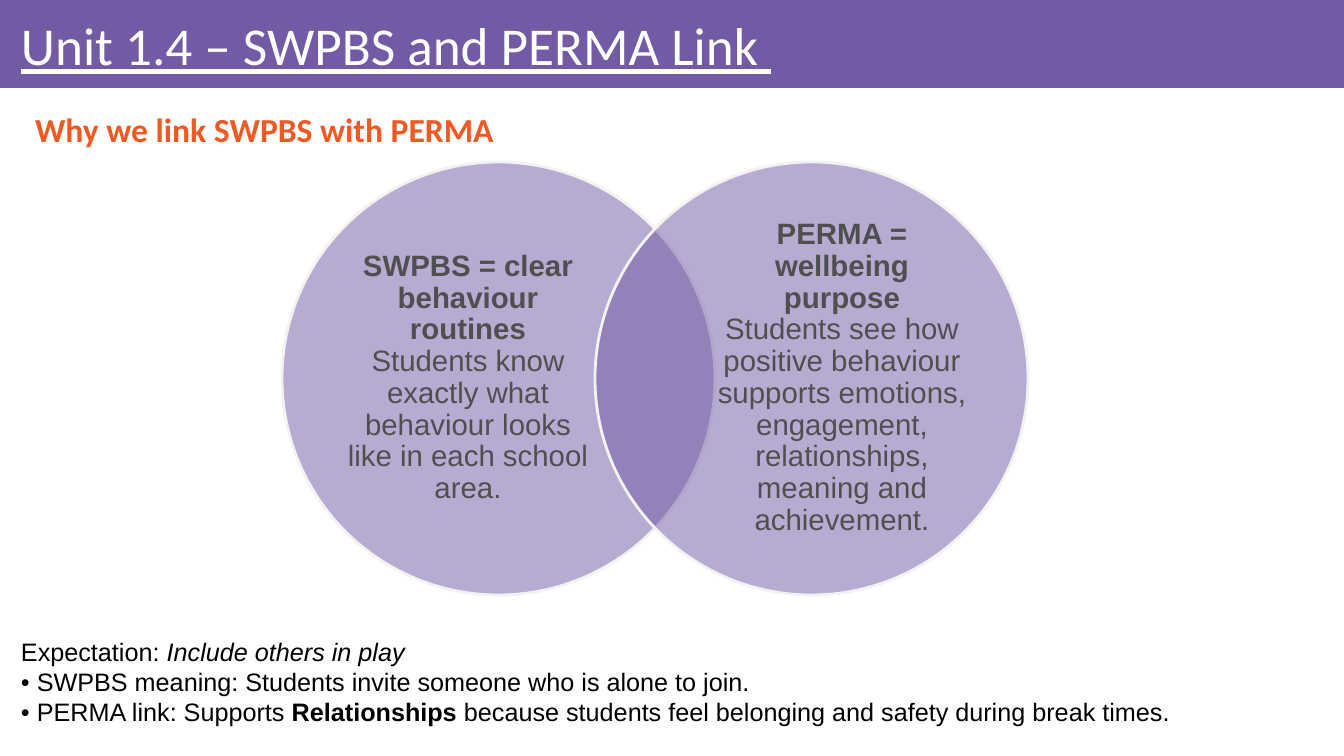
from lxml.etree import SubElement
from pptx import Presentation
from pptx.dml.color import RGBColor
from pptx.enum.shapes import MSO_SHAPE as Shape
from pptx.enum.text import MSO_ANCHOR as Anchor, MSO_AUTO_SIZE as AutoSize, PP_ALIGN as Align
from pptx.oxml.ns import qn
from pptx.util import Pt

COLORS = {
    "band": "735AA5", "circle": "7359A5", "outline": "F2F2F2", "title": "FFFFFF",
    "heading": "F05A22", "circle_text": "4F4F50", "example": "000000",
}
TITLE = [("Unit 1.4 – SWPBS and PERMA Link ", "u")]
HEADING = [("Why we link SWPBS with PERMA", "b")]
CIRCLES = [
    [("SWPBS = clear behaviour routines\n", "b"),
     ("Students know exactly what behaviour looks like in each school area.", "")],
    [("PERMA = wellbeing purpose\n", "b"),
     ("Students see how positive behaviour supports emotions, engagement, "
      "relationships, meaning and achievement.", "")],
]
EXAMPLE = [
    ("Expectation: ", ""),
    ("Include others in play\n", "i"),
    ("• SWPBS meaning: Students invite someone who is alone to join.\n"
     "• PERMA link: Supports ", ""),
    ("Relationships", "b"),
    (" because students feel belonging and safety during break times.", ""),
]

PX = 914400 / 100.8
WIDTH, HEIGHT = 1344, 756
DIAMETER, CIRCLE_LEFT, CIRCLE_TOP, CIRCLE_STEP = 433, 282, 162, 313
LABEL_WIDTH, LABEL_HEIGHT, LABEL_INSET = 250, 332, 61


def px(*lengths):
    return [round(length * PX) for length in lengths]


def color(name):
    return RGBColor.from_string(COLORS[name])


def write(shape, runs, size, ink, font="Arial", align=Align.LEFT, anchor=Anchor.MIDDLE,
          spacing=0.9, before=0, insets=(10, 5, 10, 5), auto_size=AutoSize.NONE):
    frame = shape.text_frame
    frame.word_wrap = True
    frame.auto_size = auto_size
    frame.vertical_anchor = anchor
    frame.margin_left, frame.margin_top, frame.margin_right, frame.margin_bottom = px(*insets)
    paragraph = frame.paragraphs[0]
    paragraph.alignment = align
    paragraph.line_spacing = spacing
    paragraph.space_before = Pt(before)
    for text, style in runs:
        for index, line in enumerate(text.split("\n")):
            if index:
                paragraph.add_line_break()
            if not line:
                continue
            run = paragraph.add_run()
            run.text = line
            run.font.name = font
            run.font.size = Pt(size)
            run.font.color.rgb = color(ink)
            run.font.bold = "b" in style
            run.font.italic = "i" in style
            run.font.underline = "u" in style
    return paragraph


def place(shape, *box):
    shape.left, shape.top, shape.width, shape.height = px(*box)


def add_filled(slide, kind, box, fill):
    shape = slide.shapes.add_shape(kind, *px(*box))
    shape.shadow.inherit = False
    shape.fill.solid()
    shape.fill.fore_color.rgb = color(fill)
    shape.line.fill.background()
    return shape


def add_circle(slide, left):
    circle = add_filled(slide, Shape.OVAL, (left, CIRCLE_TOP, DIAMETER, DIAMETER), "circle")
    circle.line.color.rgb = color("outline")
    circle.line.width = Pt(2)
    fill = circle.element.spPr.find(qn("a:solidFill"))
    SubElement(fill[0], qn("a:alpha"), val="50000")


def main():
    presentation = Presentation()
    presentation.slide_width, presentation.slide_height = px(WIDTH, HEIGHT)
    slide = presentation.slides.add_slide(presentation.slide_layouts[1])

    band = add_filled(slide, Shape.RECTANGLE, (0, 0, WIDTH, 88), "band")
    slide.shapes.title.element.addprevious(band.element)
    place(slide.shapes.title, 11, 9, 1316, 79)
    write(slide.shapes.title, TITLE, 38, "title", font="Calibri", insets=(10, 6, 6, 6))

    heading = slide.placeholders[1]
    place(heading, 0, 102, 1316, 60)
    paragraph = write(heading, HEADING, 24, "heading", font="Calibri",
                      align=Align.JUSTIFY, before=10)
    properties = paragraph._p.get_or_add_pPr()
    indent, hanging = px(50, -25)
    properties.set("marL", str(indent))
    properties.set("indent", str(hanging))
    SubElement(properties, qn("a:buNone"))

    label_top = CIRCLE_TOP + (DIAMETER - LABEL_HEIGHT) // 2
    label_insets = (LABEL_INSET, DIAMETER - LABEL_INSET - LABEL_WIDTH)
    for index, (runs, inset) in enumerate(zip(CIRCLES, label_insets)):
        left = CIRCLE_LEFT + index * CIRCLE_STEP
        add_circle(slide, left)
        label = slide.shapes.add_textbox(*px(left + inset, label_top, LABEL_WIDTH, LABEL_HEIGHT))
        write(label, runs, 21, "circle_text", align=Align.CENTER, insets=(0, 0, 0, 0))

    example = slide.shapes.add_textbox(*px(11, 631, 1364, 102))
    write(example, EXAMPLE, 18, "example", anchor=Anchor.TOP, spacing=1.0,
          auto_size=AutoSize.SHAPE_TO_FIT_TEXT)

    presentation.save("out.pptx")


if __name__ == "__main__":
    main()
